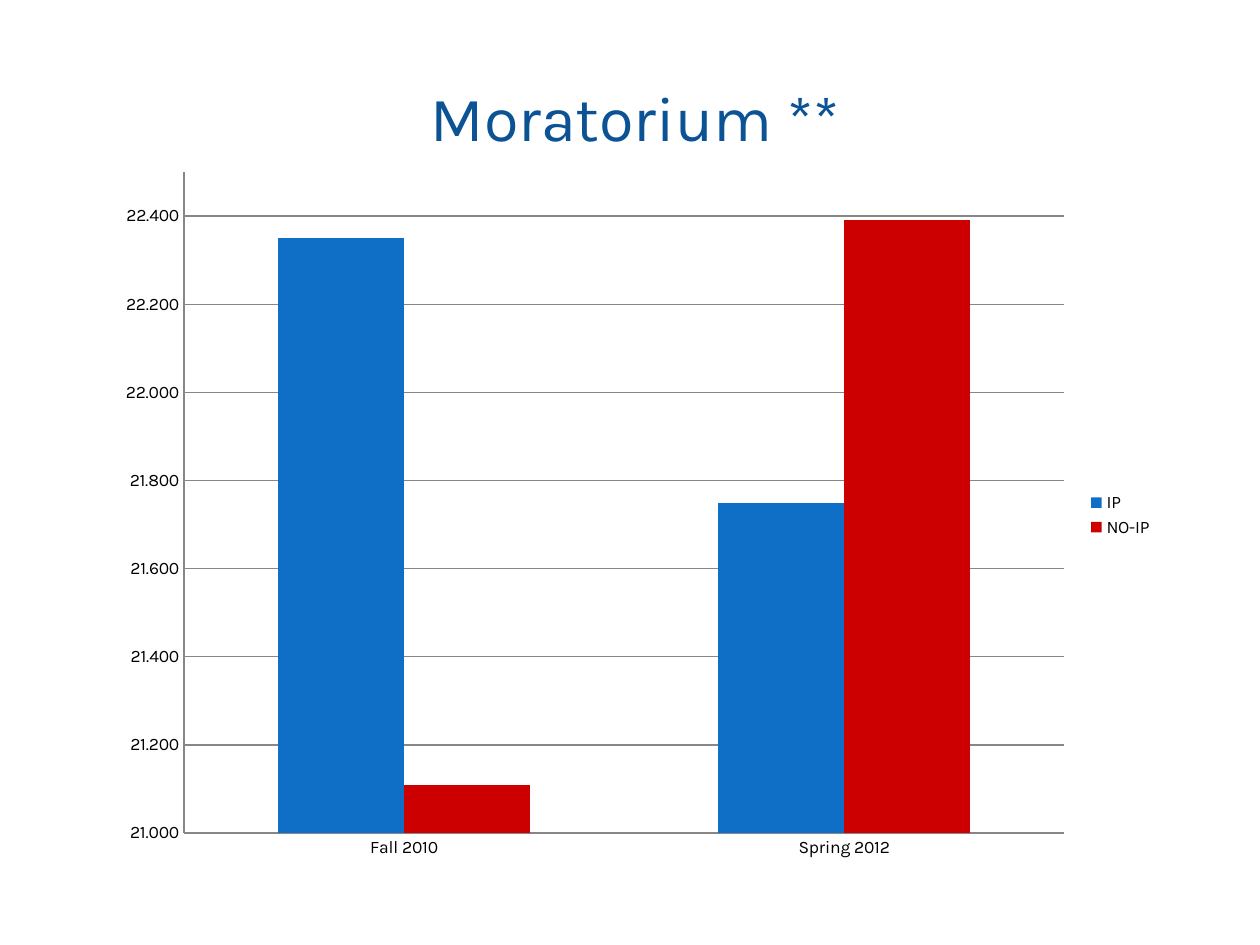
from pptx import Presentation
from pptx.chart.data import CategoryChartData
from pptx.dml.color import RGBColor
from pptx.enum.chart import XL_CHART_TYPE, XL_LEGEND_POSITION, XL_TICK_MARK
from pptx.enum.text import MSO_ANCHOR, PP_ALIGN
from pptx.util import Cm, Pt

FONT = "Karla"
LEFT, WIDTH = Cm(2.11), Cm(21.39)
CATEGORIES = ["Fall 2010", "Spring 2012"]
SERIES = [
    ("IP", [22.35, 21.75], "0F6FC6"),
    ("NO-IP", [21.11, 22.39], "CC0000"),
]


def color(value):
    return RGBColor.from_string(value)


def format_font(font, size, fill):
    font.name = FONT
    font.size = Pt(size)
    font.bold = False
    font.color.rgb = color(fill)


def write_text(box, text, size=18, fill="000000", align=PP_ALIGN.LEFT):
    frame = box.text_frame
    frame.word_wrap = True
    frame.vertical_anchor = MSO_ANCHOR.MIDDLE
    para = frame.paragraphs[0]
    para.alignment = align
    span = para.add_run()
    span.text = text
    format_font(span.font, size, fill)


def place_title(page, text):
    title = page.shapes.title
    title.left, title.top, title.width, title.height = LEFT, Cm(1.7), WIDTH, Cm(1.27)
    write_text(title, text, size=36, fill="0B5394", align=PP_ALIGN.CENTER)


def format_line(line, fill="878787"):
    line.color.rgb = color(fill)
    line.width = Pt(0.75)


def format_axes(chart):
    for axis in (chart.category_axis, chart.value_axis):
        axis.major_tick_mark = XL_TICK_MARK.NONE
        axis.minor_tick_mark = XL_TICK_MARK.NONE
        format_line(axis.format.line)
    scale = chart.value_axis
    scale.minimum_scale, scale.maximum_scale, scale.major_unit = 21, 22.5, 0.2
    scale.has_major_gridlines = True
    format_line(scale.major_gridlines.format.line)
    scale.tick_labels.number_format = "####.000"
    scale.tick_labels.number_format_is_linked = False


def add_column_chart(page):
    data = CategoryChartData()
    data.categories = CATEGORIES
    for name, values, _ in SERIES:
        data.add_series(name, values)
    chart = page.shapes.add_chart(
        XL_CHART_TYPE.COLUMN_CLUSTERED, LEFT, Cm(3.18), WIDTH, Cm(14.4), data
    ).chart
    format_font(chart.font, 10, "000000")
    chart.has_title = False
    chart.has_legend = True
    chart.legend.position = XL_LEGEND_POSITION.RIGHT
    chart.legend.include_in_layout = False
    format_axes(chart)
    plot = chart.plots[0]
    plot.gap_width = 150
    plot.overlap = 0
    plot.vary_by_categories = False
    for series, (_, _, fill) in zip(plot.series, SERIES):
        series.format.fill.solid()
        series.format.fill.fore_color.rgb = color(fill)


def main():
    deck = Presentation()
    deck.slide_width, deck.slide_height = Cm(25.4), Cm(19.05)
    page = deck.slides.add_slide(deck.slide_layouts[5])
    place_title(page, "Moratorium **")
    add_column_chart(page)
    deck.save("out.pptx")


if __name__ == "__main__":
    main()
